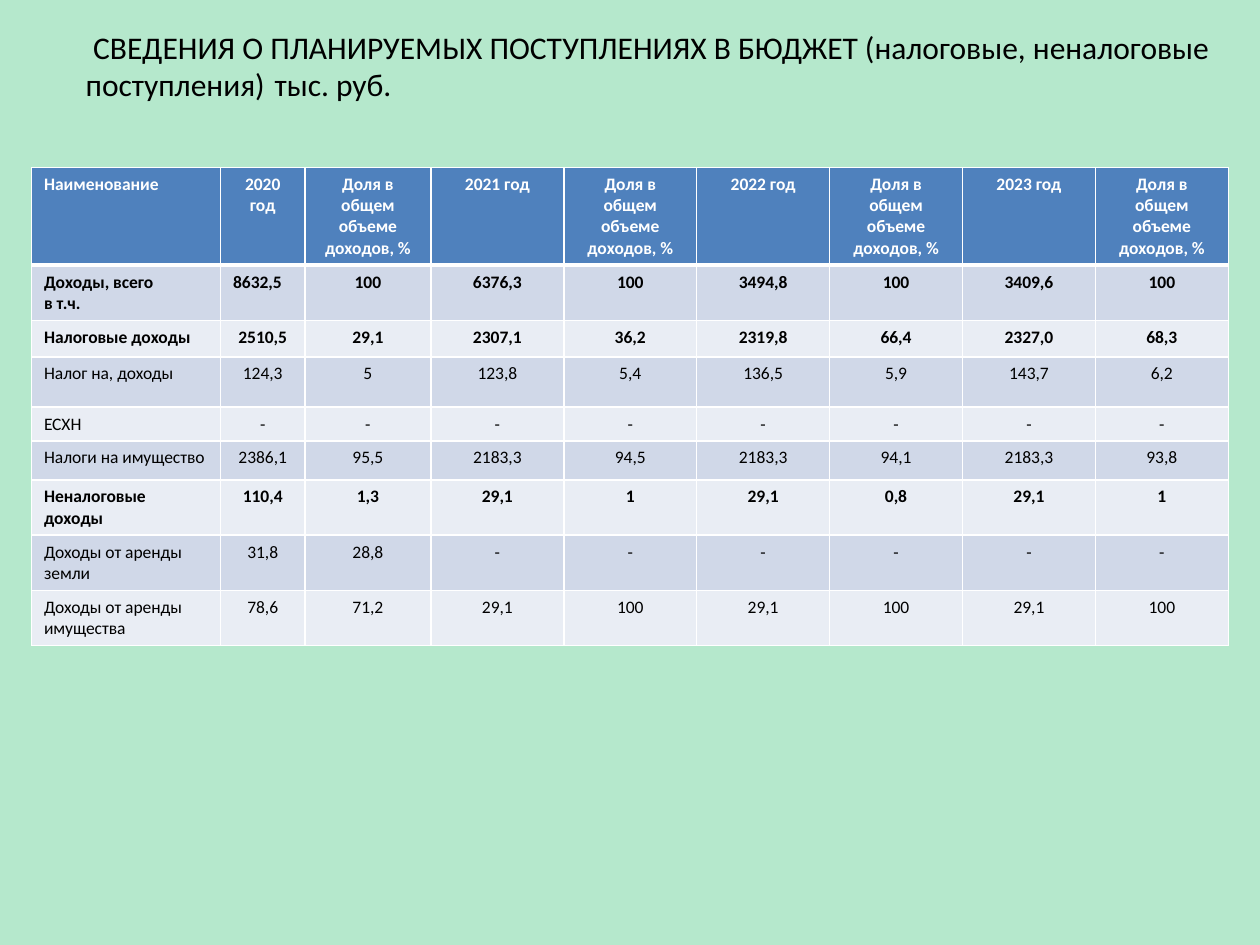
from lxml import etree
from pptx import Presentation
from pptx.dml.color import RGBColor
from pptx.enum.text import PP_ALIGN
from pptx.oxml.ns import qn
from pptx.util import Inches, Pt

LEFT, CENTER = PP_ALIGN.LEFT, PP_ALIGN.CENTER
WHITE, BLACK = "FFFFFF", "000000"
HEADER_FILL = "4F81BD"
BAND_FILLS = ["E9EDF4", "D0D8E8"]


def paint(fill, color):
    fill.solid()
    fill.fore_color.rgb = RGBColor.from_string(color)


def write(frame, text, size=10, color=BLACK, bold=False, align=LEFT):
    frame.word_wrap = True
    frame.text = text
    for paragraph in frame.paragraphs:
        paragraph.alignment = align
        for run in paragraph.runs:
            run.font.name = "Calibri"
            run.font.size = Pt(size)
            run.font.bold = bold
            paint(run.font.fill, color)


prs = Presentation()
prs.slide_width, prs.slide_height = Inches(10), Inches(7.5)
slide = prs.slides.add_slide(prs.slide_layouts[6])
paint(slide.background.fill, "B5E8CC")

share = "Доля в общем объеме доходов, %"
rows = [
    ["Наименование", "2020 год", share, "2021 год", share, "2022 год", share, "2023 год", share],
    ["Доходы, всего\nв т.ч.", "8632,5", "100", "6376,3", "100", "3494,8", "100", "3409,6", "100"],
    ["Налоговые доходы", "2510,5", "29,1", "2307,1", "36,2", "2319,8", "66,4", "2327,0", "68,3"],
    ["Налог на, доходы", "124,3", "5", "123,8", "5,4", "136,5", "5,9", "143,7", "6,2"],
    ["ЕСХН"] + ["-"] * 8,
    ["Налоги на имущество", "2386,1", "95,5", "2183,3", "94,5", "2183,3", "94,1", "2183,3", "93,8"],
    ["Неналоговые доходы", "110,4", "1,3", "29,1", "1", "29,1", "0,8", "29,1", "1"],
    ["Доходы от аренды земли", "31,8", "28,8"] + ["-"] * 6,
    ["Доходы от аренды имущества", "78,6", "71,2"] + ["29,1", "100"] * 3,
]
bold_rows = {0, 1, 2, 6}
row_heights = [0.74, 0.42, 0.29, 0.4, 0.26, 0.31, 0.42, 0.42, 0.42]
first_widths = [1.5, 0.67, 1]
year_width = (9.5 - sum(first_widths)) / 6
column_widths = first_widths + [year_width] * 6

revenue = slide.shapes.add_table(
    len(rows), len(column_widths), Inches(0.25), Inches(1.33), Inches(9.5), Inches(3.77)
).table
for column, width in zip(revenue.columns, column_widths):
    column.width = Inches(width)

for r, (values, height) in enumerate(zip(rows, row_heights)):
    revenue.rows[r].height = Inches(height)
    for c, value in enumerate(values):
        cell = revenue.cell(r, c)
        left_aligned = c == 0 or (r, c) == (1, 1)
        write(
            cell.text_frame,
            value,
            color=BLACK if r else WHITE,
            bold=r in bold_rows,
            align=LEFT if left_aligned else CENTER,
        )
        properties = cell._tc.get_or_add_tcPr()
        for side in ("lnL", "lnR", "lnT", "lnB"):
            under_header = (r, side) in {(0, "lnB"), (1, "lnT")}
            border = etree.SubElement(properties, qn(f"a:{side}"), w=str(Pt(3 if under_header else 1)))
            border_fill = etree.SubElement(border, qn("a:solidFill"))
            etree.SubElement(border_fill, qn("a:srgbClr"), val=WHITE)
        paint(cell.fill, BAND_FILLS[r % 2] if r else HEADER_FILL)

title = slide.shapes.add_textbox(Inches(0.33), Inches(0.17), Inches(9.67), Inches(0.71)).text_frame
title.margin_left = Inches(0.35)
write(
    title,
    "СВЕДЕНИЯ О ПЛАНИРУЕМЫХ ПОСТУПЛЕНИЯХ В БЮДЖЕТ (налоговые, неналоговые поступления)\tтыс. руб.",
    size=18,
)
title_format = title.paragraphs[0]._p.get_or_add_pPr()
title_format.set("indent", str(Inches(0.06)))
tab_stops = etree.SubElement(title_format, qn("a:tabLst"))
etree.SubElement(tab_stops, qn("a:tab"), pos=str(Inches(8.97)), algn="r")

prs.save("out.pptx")
